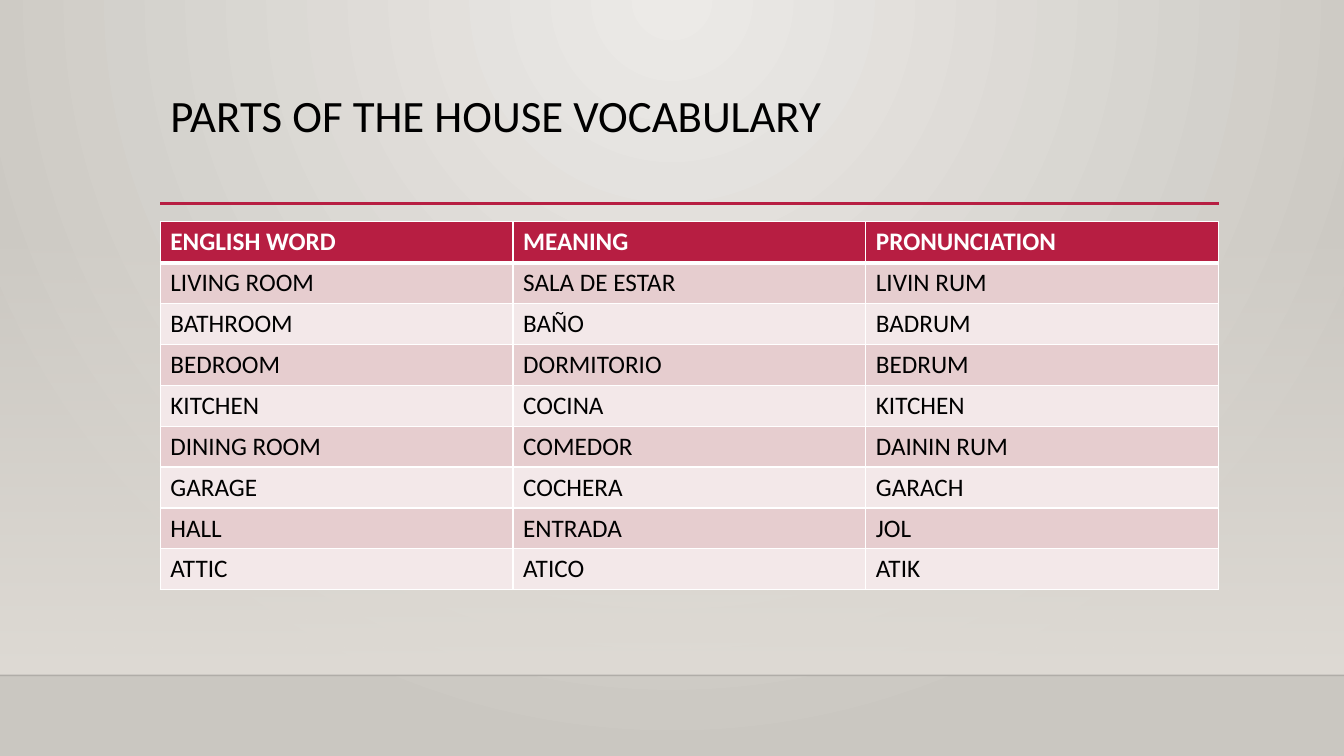
from dataclasses import dataclass

from lxml.etree import SubElement as Sub
from pptx import Presentation
from pptx.dml.color import RGBColor
from pptx.dml.fill import FillFormat
from pptx.enum.shapes import MSO_CONNECTOR as Link, MSO_SHAPE as Form
from pptx.enum.text import MSO_ANCHOR as Anchor, PP_ALIGN as Align
from pptx.oxml.ns import qn
from pptx.slide import Slide
from pptx.table import _Cell as Cell
from pptx.text.text import _Paragraph as Para
from pptx.util import Cm, Pt

RED = RGBColor(0xB7, 0x1E, 0x42)
ROSE = RGBColor(0xE6, 0xCD, 0xCF)
BLUSH = RGBColor(0xF3, 0xE8, 0xE9)
WHITE = RGBColor(0xFF, 0xFF, 0xFF)
BLACK = RGBColor(0, 0, 0)
PALE = RGBColor(0xEC, 0xEA, 0xE7)
STONE = RGBColor(0xCA, 0xC7, 0xC1)
SAND = RGBColor(0xDF, 0xDB, 0xD5)

WIDE, HIGH = Cm(33.87), Cm(19.05)
LEFT, SPAN = Cm(4.04), Cm(26.67)
WALL, FLOOR = Cm(5.61), Cm(17.02)
TOP, ROW = Cm(5.59), Cm(1.03)

WORDS = [
    ("ENGLISH WORD", "MEANING", "PRONUNCIATION"),
    ("LIVING ROOM", "SALA DE ESTAR", "LIVIN RUM"),
    ("BATHROOM", "BAÑO", "BADRUM"),
    ("BEDROOM", "DORMITORIO", "BEDRUM"),
    ("KITCHEN", "COCINA", "KITCHEN"),
    ("DINING ROOM", "COMEDOR", "DAININ RUM"),
    ("GARAGE", "COCHERA", "GARACH"),
    ("HALL", "ENTRADA", "JOL"),
    ("ATTIC", "ATICO", "ATIK"),
]


@dataclass
class Rule:
    left: int
    right: int
    y: int
    tint: RGBColor
    width: float
    alpha: int = 100


RULES = [
    Rule(0, WIDE, FLOOR, BLACK, 1, 20),
    Rule(LEFT, Cm(30.72), Cm(5.13), RED, 2.5),
]


def style(para: Para, size: int, tint: RGBColor, bold: bool = False) -> None:
    look = {"name": "Calibri", "size": Pt(size), "bold": bold}
    for key, value in look.items():
        setattr(para.font, key, value)
    para.font.color.rgb = tint


def fade(tone, alpha: int) -> None:
    """Set the opacity, in percent, of the colour inside an element."""
    Sub(tone.find(".//" + qn("a:srgbClr")), qn("a:alpha"), val=str(alpha * 1000))


def blend(fill: FillFormat, first: RGBColor, last: RGBColor) -> None:
    fill.gradient()
    for stop, tint in zip(fill.gradient_stops, (first, last)):
        stop.color.rgb = tint


def paint(slide: Slide) -> None:
    """Fill the background with a glow centred on the top edge."""
    blend(slide.background.fill, PALE, STONE)
    grad = slide.element.find(".//" + qn("a:gradFill"))
    grad.remove(grad.find(qn("a:lin")))
    glow = Sub(grad, qn("a:path"), path="circle")
    Sub(glow, qn("a:fillToRect"), l="43000", t="0", r="43000", b="100000")


def add_wall(slide: Slide) -> None:
    wall = slide.shapes.add_shape(Form.RECTANGLE, 0, WALL, WIDE, FLOOR - WALL)
    wall.shadow.inherit = False
    wall.line.fill.background()
    blend(wall.fill, SAND, SAND)
    wall.fill.gradient_angle = 270
    fade(wall.element.find(".//" + qn("a:gs")), 0)


def add_rule(slide: Slide, rule: Rule) -> None:
    bar = slide.shapes.add_connector(
        Link.STRAIGHT, rule.left, rule.y, rule.right, rule.y)
    bar.line.color.rgb = rule.tint
    bar.line.width = Pt(rule.width)
    if rule.alpha < 100:
        fade(bar.element.spPr, rule.alpha)
    Sub(bar.element.spPr, qn("a:effectLst"))


def add_title(slide: Slide) -> None:
    title = slide.shapes.title
    place = {"left": LEFT, "top": Cm(2.24), "width": SPAN, "height": Cm(2.92)}
    for key, value in place.items():
        setattr(title, key, value)
    frame = title.text_frame
    frame.text = "PARTS OF THE HOUSE VOCABULARY"
    frame.vertical_anchor = Anchor.TOP
    para = frame.paragraphs[0]
    para.alignment = Align.LEFT
    para.line_spacing = 0.9
    style(para, 32, BLACK)


def edge(cell: Cell, base: float) -> None:
    """Draw white borders; base is the bottom width in points."""
    props = cell._tc.get_or_add_tcPr()
    for side, width in {"L": 1, "R": 1, "T": 1, "B": base}.items():
        line = Sub(props, qn(f"a:ln{side}"), w=str(Pt(width)))
        Sub(Sub(line, qn("a:solidFill")), qn("a:srgbClr"), val=str(WHITE))


def add_words(slide: Slide) -> None:
    count = len(WORDS)
    table = slide.shapes.add_table(
        count, len(WORDS[0]), LEFT, TOP, SPAN, ROW * count).table
    for i, words in enumerate(WORDS):
        head = i == 0
        table.rows[i].height = ROW
        for cell, word in zip(table.rows[i].cells, words):
            cell.text = word
            style(cell.text_frame.paragraphs[0], 18,
                  WHITE if head else BLACK, head)
            edge(cell, 3 if head else 1)
            cell.fill.solid()
            cell.fill.fore_color.rgb = RED if head else (BLUSH, ROSE)[i % 2]
            if i == 1:
                top = cell._tc.tcPr.find(qn("a:lnT"))
                top.set("w", str(Pt(3)))


def main() -> None:
    deck = Presentation()
    deck.slide_width, deck.slide_height = WIDE, HIGH
    slide = deck.slides.add_slide(deck.slide_layouts[5])
    paint(slide)
    add_wall(slide)
    for rule in RULES:
        add_rule(slide, rule)
    add_title(slide)
    add_words(slide)
    deck.save("out.pptx")


if __name__ == "__main__":
    main()
